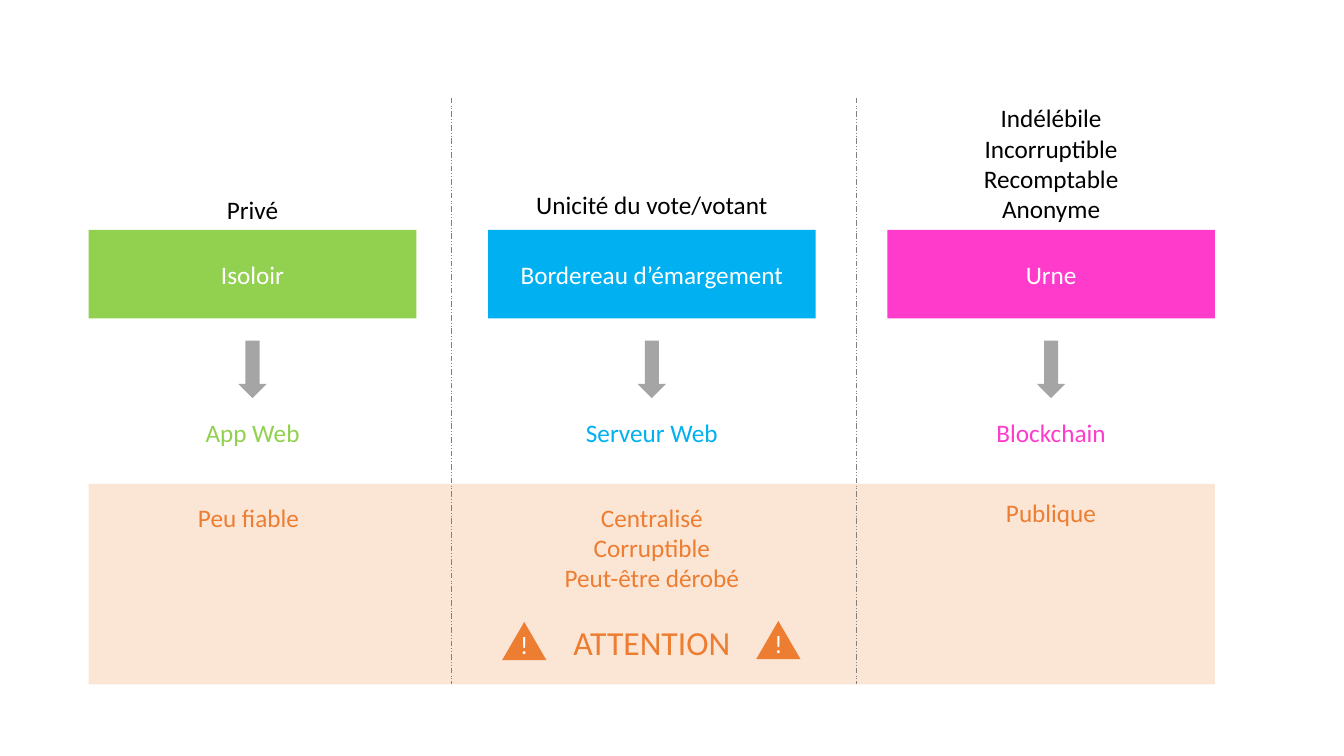
from dataclasses import dataclass

from lxml import etree
from pptx import Presentation, util as u
from pptx.dml.color import RGBColor
from pptx.enum import dml, shapes, text
from pptx.oxml.ns import qn


@dataclass(frozen=True)
class Theme:
    """Colours, font and type sizes of the slide."""
    font: str = "Calibri"
    body: int = 18
    alert: int = 24
    black: str = "000000"
    white: str = "FFFFFF"
    green: str = "92D050"
    blue: str = "00B0F0"
    pink: str = "FF3BCC"
    orange: str = "ED7D31"
    arrow: str = "A5A5A5"
    divider: str = "808080"


@dataclass(frozen=True)
class Grid:
    """Columns and rows of the slide, in inches."""
    left: float = 0.88
    column: float = 3.25
    pitch: float = 3.96
    top: float = 0.97
    step: float = 2.28
    step_height: float = 0.88
    arrow: float = 3.38
    tool: float = 4.09
    band: float = 4.8
    bottom: float = 6.79
    line: float = 0.4

    def start(self, index):
        """Return the left edge of a column."""
        return self.left + index * self.pitch

    def centre(self, index):
        """Return the centre of a column."""
        return self.start(index) + self.column / 2


THEME = Theme()
GRID = Grid()
STEPS = [
    ("Isoloir", THEME.green),
    ("Bordereau d’émargement", THEME.blue),
    ("Urne", THEME.pink),
]
QUALITIES = [
    (["Privé"], 1.88, 0.4),
    (["Unicité du vote/votant"], 1.83, 0.4),
    (["Indélébile", "Incorruptible", "Recomptable", "Anonyme"], GRID.top, 1.31),
]
TOOLS = [("App Web", 1.15), ("Serveur Web", 1.52), ("Blockchain", 1.3)]
RISKS = [
    (["Peu fiable"], GRID.centre(0) - 0.04, 4.93, 1.24, 0.4),
    (["Centralisé", "Corruptible", "Peut-être dérobé"], GRID.centre(1), 4.93, 1.99, 1.01),
    (["Publique"], GRID.centre(2), 4.88, 1.13, 0.4),
]
DIVIDERS = [4.48, 8.49]
WARNINGS = [(4.98, 6.17), (7.5, 6.16)]


def write(box, lines, colour, size=THEME.body):
    """Fill a text frame with centred paragraphs."""
    frame = box.text_frame
    frame.text = "\n".join(lines)
    for para in frame.paragraphs:
        para.alignment = text.PP_ALIGN.CENTER
        para.font.name = THEME.font
        para.font.size = u.Pt(size)
        para.font.color.rgb = RGBColor.from_string(colour)


def add_block(parent, kind, left, top, width, height, colour):
    """Add a flat preset shape without outline."""
    block = parent.shapes.add_shape(kind, *map(u.Inches, (left, top, width, height)))
    block.shadow.inherit = False
    block.fill.solid()
    block.fill.fore_color.rgb = RGBColor.from_string(colour)
    block.line.fill.background()
    return block


def add_label(parent, lines, centre, top, width, height, colour,
              size=THEME.body, wrap=False):
    """Add a text box centred on a vertical axis."""
    box = parent.shapes.add_textbox(
        *map(u.Inches, (centre - width / 2, top, width, height)))
    box.text_frame.word_wrap = wrap
    box.text_frame.auto_size = text.MSO_AUTO_SIZE.SHAPE_TO_FIT_TEXT
    write(box, lines, colour, size)


def add_band(page):
    """Add the translucent band behind the risks."""
    width = 2 * GRID.pitch + GRID.column
    band = add_block(page, shapes.MSO_SHAPE.RECTANGLE, GRID.left, GRID.band,
                     width, GRID.bottom - GRID.band, THEME.orange)
    colour = band._element.spPr.find(qn("a:solidFill"))[0]
    etree.SubElement(colour, qn("a:alpha"), val="20000")


def add_step(page, index, name, colour):
    """Add a voting step and the arrow below it."""
    step = add_block(page, shapes.MSO_SHAPE.RECTANGLE, GRID.start(index), GRID.step,
                     GRID.column, GRID.step_height, colour)
    step.text_frame.vertical_anchor = text.MSO_ANCHOR.MIDDLE
    write(step, [name], THEME.white)
    add_block(page, shapes.MSO_SHAPE.DOWN_ARROW, GRID.centre(index) - 0.14,
              GRID.arrow, 0.28, 0.57, THEME.arrow)


def add_warning(page, left, top):
    """Add a grouped warning triangle with its exclamation mark."""
    group = page.shapes.add_group_shape()
    add_block(group, shapes.MSO_SHAPE.ISOSCELES_TRIANGLE, left, top, 0.44, 0.38,
              THEME.orange)
    add_label(group, ["!"], left + 0.22, top + 0.02, 0.28, GRID.line, THEME.white)


def add_divider(page, across):
    """Add a dashed vertical line between two columns."""
    line = page.shapes.add_connector(
        shapes.MSO_CONNECTOR.STRAIGHT,
        *map(u.Inches, (across, GRID.top, across, GRID.bottom)))
    line.line.color.rgb = RGBColor.from_string(THEME.divider)
    line.line.width = u.Pt(0.5)
    line.line.dash_style = dml.MSO_LINE.DASH_DOT_DOT
    etree.SubElement(line._element.spPr, qn("a:effectLst"))


def main():
    """Build the slide and save it."""
    deck = Presentation()
    deck.slide_width, deck.slide_height = u.Inches(13.33), u.Inches(7.5)
    page = deck.slides.add_slide(deck.slide_layouts[6])
    add_band(page)
    for index, (name, colour) in enumerate(STEPS):
        add_step(page, index, name, colour)
        lines, top, height = QUALITIES[index]
        add_label(page, lines, GRID.centre(index), top, GRID.column, height,
                  THEME.black, wrap=True)
        tool, width = TOOLS[index]
        add_label(page, [tool], GRID.centre(index), GRID.tool, width, GRID.line, colour)
    for lines, centre, top, width, height in RISKS:
        add_label(page, lines, centre, top, width, height, THEME.orange)
    for left, top in WARNINGS:
        add_warning(page, left, top)
    add_label(page, ["ATTENTION"], GRID.centre(1), 6.12, 1.78, 0.5, THEME.orange,
              THEME.alert)
    for across in DIVIDERS:
        add_divider(page, across)
    deck.save("out.pptx")


if __name__ == "__main__":
    main()
